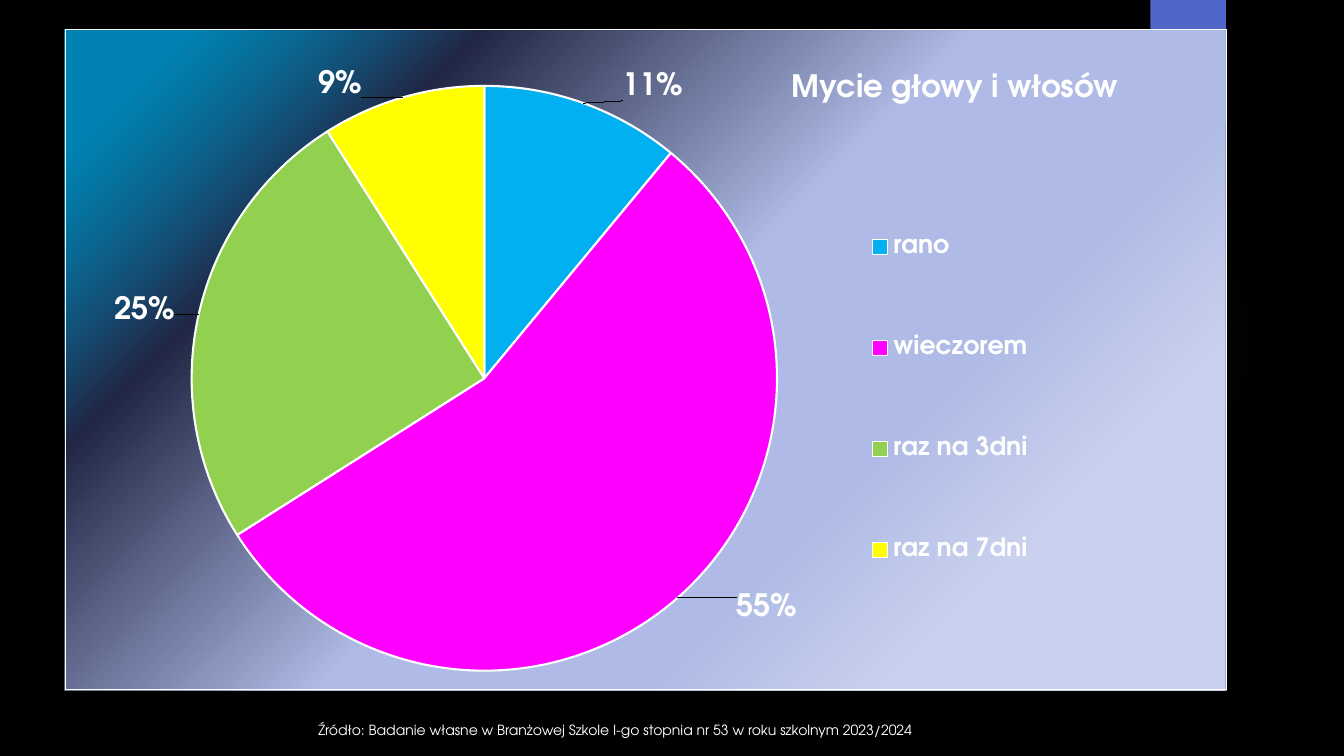
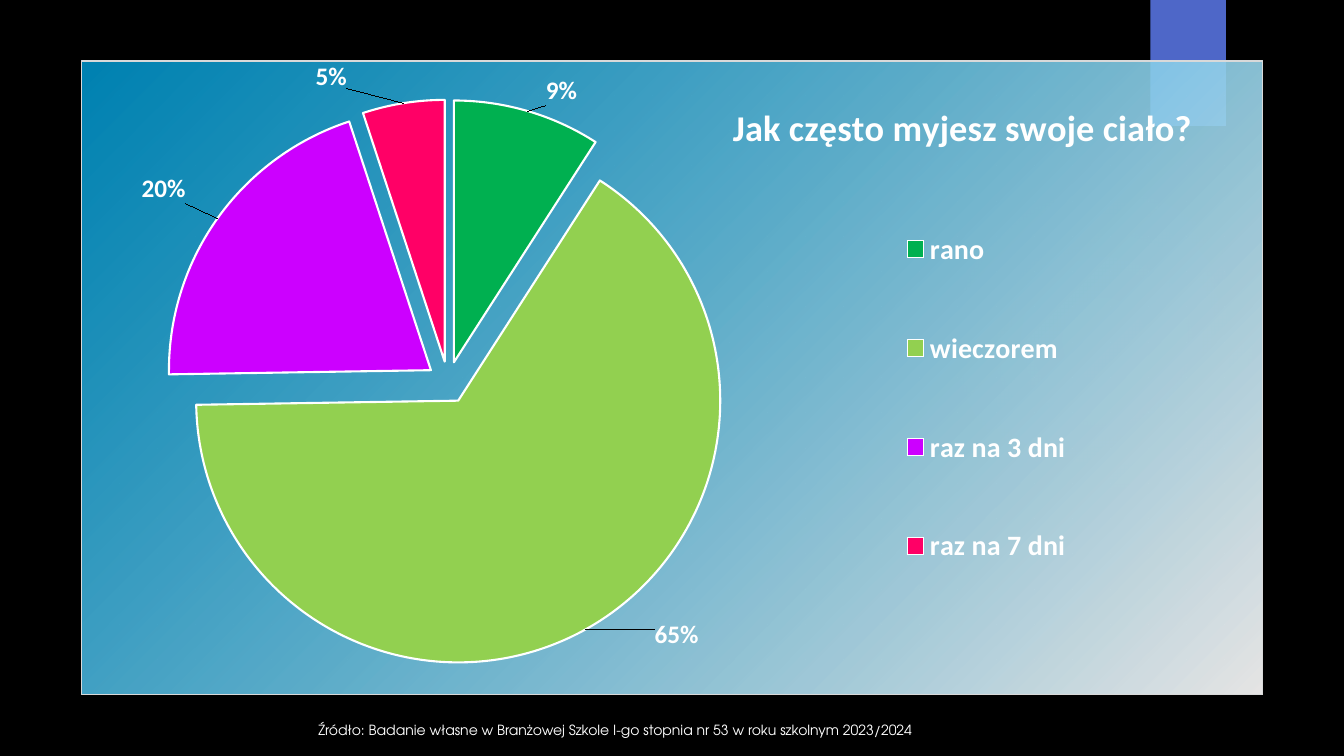
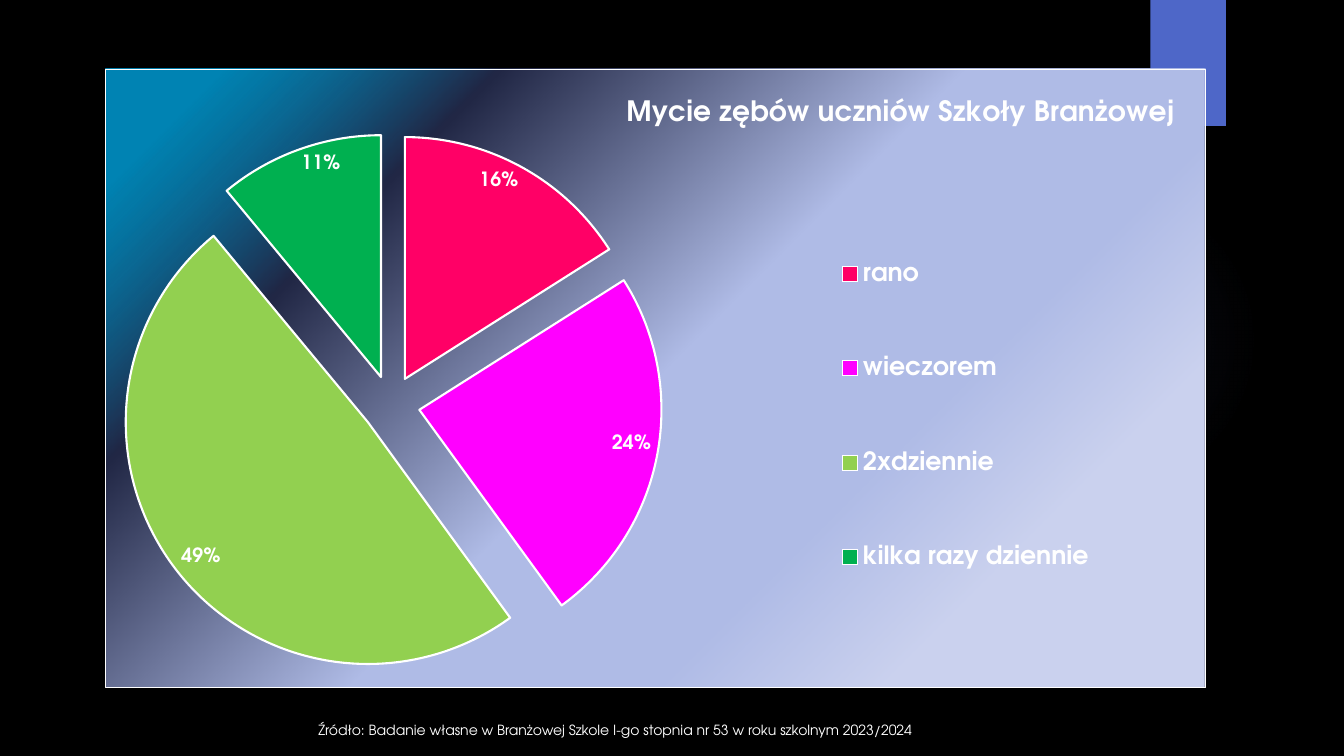
from dataclasses import dataclass
from typing import Any

from pptx import Presentation
from pptx.chart.data import CategoryChartData
from pptx.dml.color import RGBColor
from pptx.enum.chart import XL_CHART_TYPE as ChartType
from pptx.enum.chart import XL_LABEL_POSITION as LabelPos
from pptx.enum.chart import XL_LEGEND_POSITION as LegendPos
from pptx.enum.shapes import MSO_SHAPE as Shape
from pptx.oxml import parse_xml
from pptx.oxml.ns import nsdecls, qn
from pptx.util import Inches, Pt

COLORS = {
    "black": "000000", "white": "FFFFFF", "tab": "4E67C8", "glow": "5968B0",
    "sky": "00B0F0", "navy": "212745", "lilac": "AFBBE6", "pale": "CAD1EE",
    "mist": "E7E6E6", "frame": "D9D9D9", "magenta": "FF00FF", "lime": "92D050",
    "yellow": "FFFF00", "green": "00B050", "violet": "CC00FF", "pink": "FF0066",
}
ADVENTOR = "TeX Gyre Adventor"
CALIBRI = "Calibri"
SOURCE = "Źródło: Badanie własne w Branżowej Szkole I-go stopnia nr 53 w roku szkolnym 2023/2024"

Stop = tuple[int, str, int]
LILAC_STOPS: list[Stop] = [(7, "sky", 74), (23, "navy", 100), (50, "lilac", 100),
                           (68, "lilac", 100), (81, "pale", 100)]
BLUE_STOPS: list[Stop] = [(0, "sky", 74), (100, "mist", 100)]
GLOW_STOPS: list[Stop] = [(0, "glow", 7), (36, "glow", 6), (69, "glow", 0)]
DIAGONAL = '<a:lin ang="2700000" scaled="0"/>'
RADIAL = '<a:path path="circle"><a:fillToRect l="50000" t="50000" r="50000" b="50000"/></a:path>'


@dataclass
class Slice:
    name: str
    value: float
    color: str
    shift: tuple[float, float] | None = None


@dataclass
class PieSlide:
    title: str
    box: tuple[float, float, float, float]
    font: str
    title_size: int
    legend_size: int
    label_size: int
    stops: list[Stop]
    border: str
    title_at: tuple[float, float]
    plot_at: tuple[float, float, float, float]
    legend_at: tuple[float, float, float, float]
    label_pos: LabelPos
    explosion: int
    slices: list[Slice]


PIES = [
    PieSlide("Mycie głowy i włosów", (0.64, 0.29, 11.53, 6.56), ADVENTOR, 22, 18, 22,
             LILAC_STOPS, "white", (0.621, 0.055), (0.109, 0.085, 0.504, 0.886),
             (0.662, 0.193, 0.2, 0.73), LabelPos.BEST_FIT, 0, [
                 Slice("rano", 0.11, "sky", (0.032, 0.005)),
                 Slice("wieczorem", 0.55, "magenta", (0.047, -0.012)),
                 Slice("raz na 3dni", 0.25, "lime", (-0.016, 0.017)),
                 Slice("raz na 7dni", 0.09, "yellow", (-0.034, 0.01))]),
    PieSlide("Jak często myjesz swoje ciało?", (0.8, 0.6, 11.73, 6.3), CALIBRI, 26, 20, 18,
             BLUE_STOPS, "frame", (0.546, 0.055), (0.071, 0.03, 0.479, 0.954),
             (0.666, 0.168, 0.2, 0.726), LabelPos.BEST_FIT, 8, [
                 Slice("rano", 0.09, "green", (0.014, 0)),
                 Slice("wieczorem", 0.65, "lime", (0.056, -0.024)),
                 Slice("raz na 3 dni", 0.2, "violet", (-0.023, -0.018)),
                 Slice("raz na 7 dni", 0.05, "pink", (-0.047, -0.014))]),
    PieSlide("Mycie zębów uczniów Szkoły Branżowej", (1.04, 0.68, 10.92, 6.15), ADVENTOR,
             20, 18, 14, LILAC_STOPS, "white", (0.469, 0.038), (0.013, 0.104, 0.493, 0.876),
             (0.643, 0.197, 0.278, 0.726), LabelPos.INSIDE_END, 12, [
                 Slice("rano", 0.16, "pink"),
                 Slice("wieczorem", 0.24, "magenta"),
                 Slice("2xdziennie", 0.49, "lime"),
                 Slice("kilka razy dziennie", 0.11, "green")]),
]


def rgb(name: str) -> RGBColor:
    return RGBColor.from_string(COLORS[name])


def set_font(font: Any, name: str, size: int, bold: bool = True) -> None:
    for key, value in {"name": name, "size": Pt(size), "bold": bold}.items():
        setattr(font, key, value)
    font.color.rgb = rgb("white")


def gradient(stops: list[Stop], direction: str) -> str:
    marks = "".join(
        f'<a:gs pos="{pos * 1000}"><a:srgbClr val="{COLORS[color]}">'
        f'<a:alpha val="{alpha * 1000}"/></a:srgbClr></a:gs>'
        for pos, color, alpha in stops)
    return f'<a:gradFill {nsdecls("a")} rotWithShape="1"><a:gsLst>{marks}</a:gsLst>{direction}</a:gradFill>'


def layout(values: tuple[float, ...], modes: str = "") -> Any:
    parts = "".join(f'<c:{key} val="{value}"/>' for key, value in zip("xywh", values))
    return parse_xml(f'<c:layout {nsdecls("c")}><c:manualLayout>{modes}{parts}</c:manualLayout></c:layout>')


def place(parent: Any, index: int, values: tuple[float, ...], inner: bool = False) -> None:
    for old in parent.findall(qn("c:layout")):
        parent.remove(old)
    target = '<c:layoutTarget val="inner"/>' if inner else ""
    parent.insert(index, layout(values, target + '<c:xMode val="edge"/><c:yMode val="edge"/>'))


def add_decor(slide: Any, kind: Shape, box: tuple[float, float, float, float]) -> Any:
    sp = slide.shapes.add_shape(kind, *map(Inches, box))
    sp.shadow.inherit = False
    sp.line.fill.background()
    return sp


def add_frame(slide: Any) -> None:
    slide.background.fill.solid()
    slide.background.fill.fore_color.rgb = rgb("black")
    glow = add_decor(slide, Shape.OVAL, (9.41, 1.83, 3.08, 3.08))
    glow.fill.background()
    pr = glow._element.spPr
    pr.replace(pr.find(qn("a:noFill")), parse_xml(gradient(GLOW_STOPS, RADIAL)))
    tab = add_decor(slide, Shape.RECTANGLE, (11.41, 0, 0.75, 1.25))
    tab.fill.solid()
    tab.fill.fore_color.rgb = rgb("tab")


def add_source(slide: Any) -> None:
    tf = slide.shapes.add_textbox(*map(Inches, (3.06, 7.11, 6.65, 0.27))).text_frame
    tf.word_wrap = True
    r = tf.paragraphs[0].add_run()
    r.text = SOURCE
    set_font(r.font, ADVENTOR, 10, False)


def style_area(chart: Any, pie: PieSlide) -> None:
    space = chart._chartSpace
    body = space.find(qn("c:chart"))
    if space.find(qn("c:roundedCorners")) is None:
        body.addprevious(parse_xml(f'<c:roundedCorners {nsdecls("c")} val="0"/>'))
    body.addnext(parse_xml(
        f'<c:spPr {nsdecls("c", "a")}>{gradient(pie.stops, DIAGONAL)}<a:ln w="9525"><a:solidFill>'
        f'<a:srgbClr val="{COLORS[pie.border]}"/></a:solidFill></a:ln></c:spPr>'))
    place(body.find(qn("c:plotArea")), 0, pie.plot_at, True)


def style_slices(series: Any, pie: PieSlide) -> None:
    labels = series.data_labels
    for key, value in {"show_value": True, "number_format": "0%",
                       "number_format_is_linked": False, "position": pie.label_pos}.items():
        setattr(labels, key, value)
    set_font(labels.font, pie.font, pie.label_size)
    for i, item in enumerate(pie.slices):
        point = series.points[i]
        point.format.fill.solid()
        point.format.fill.fore_color.rgb = rgb(item.color)
        point.format.line.color.rgb = rgb("white")
        point.format.line.width = Pt(1.5)
        if item.shift:
            label = point.data_label
            set_font(label.font, pie.font, pie.label_size)
            label.position = pie.label_pos
            mark = labels._element.findall(qn("c:dLbl"))[-1]
            mark.insert(1, layout(item.shift))
            mark.insert(2, parse_xml(f'<c:numFmt {nsdecls("c")} formatCode="0%" sourceLinked="0"/>'))
    if pie.explosion:
        series._element.find(qn("c:dPt")).addprevious(
            parse_xml(f'<c:explosion {nsdecls("c")} val="{pie.explosion}"/>'))


def add_pie(slide: Any, pie: PieSlide) -> None:
    data = CategoryChartData(number_format="0%")
    data.categories = [item.name for item in pie.slices]
    data.add_series("Series 1", [item.value for item in pie.slices])
    chart = slide.shapes.add_chart(ChartType.PIE, *map(Inches, pie.box), data).chart
    set_font(chart.font, pie.font, 10, False)
    style_area(chart, pie)

    chart.has_title = True
    title = chart.chart_title
    p = title.text_frame.paragraphs[0]
    r = p.add_run()
    r.text = pie.title
    set_font(r.font, pie.font, pie.title_size)
    place(title._element, 1, pie.title_at)

    chart.has_legend = True
    chart.legend.position = LegendPos.BOTTOM
    chart.legend.include_in_layout = False
    set_font(chart.legend.font, pie.font, pie.legend_size)
    place(chart.legend._element, 1, pie.legend_at)

    chart.plots[0].vary_by_categories = True
    style_slices(chart.plots[0].series[0], pie)


def main() -> None:
    prs = Presentation()
    prs.slide_width, prs.slide_height = Inches(13.33), Inches(7.5)
    for pie in PIES:
        slide = prs.slides.add_slide(prs.slide_layouts[6])
        add_frame(slide)
        add_pie(slide, pie)
        add_source(slide)
    prs.save("out.pptx")


if __name__ == "__main__":
    main()
